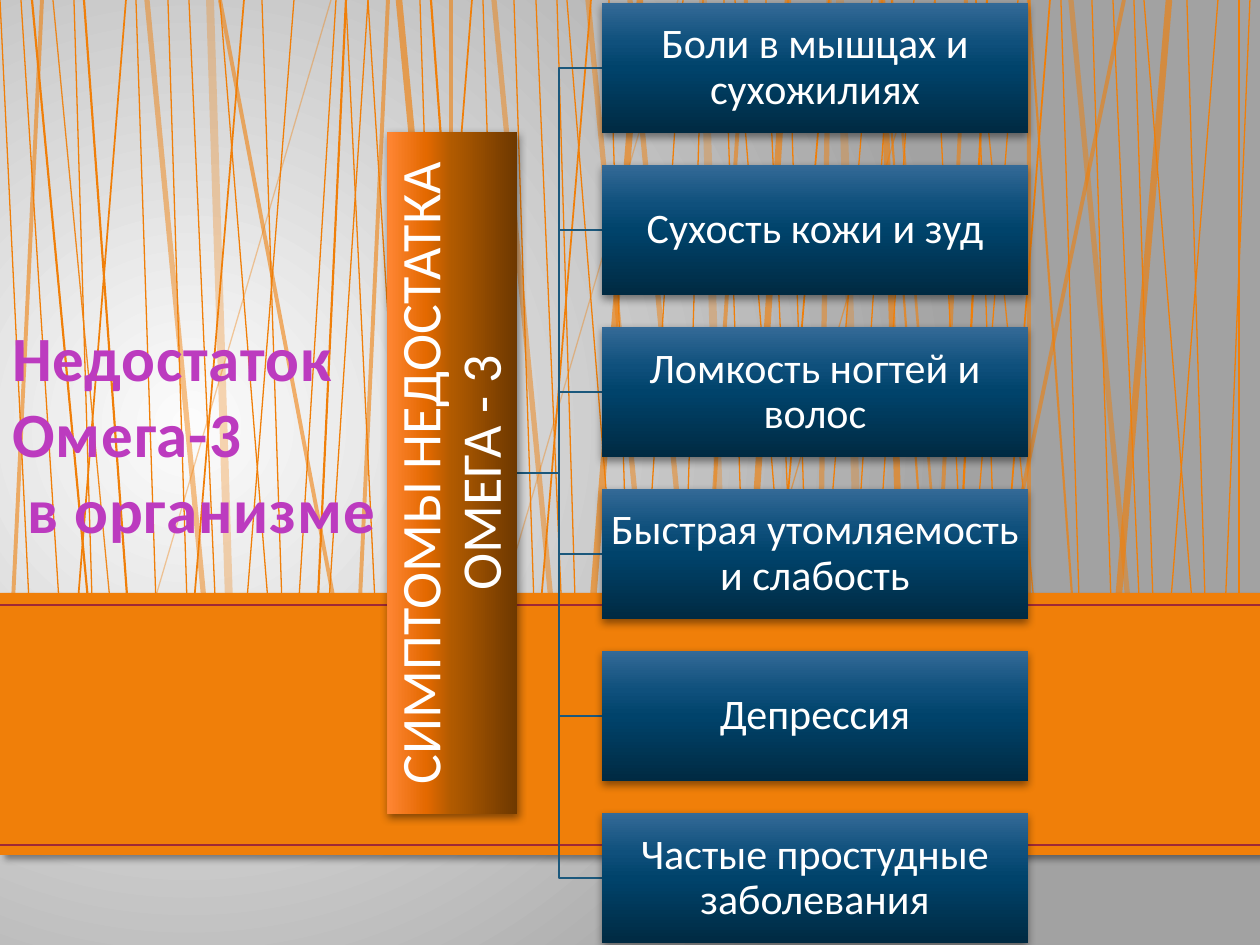
from lxml import etree
from pptx import Presentation
from pptx.dml.color import RGBColor
from pptx.enum.shapes import MSO_CONNECTOR, MSO_SHAPE
from pptx.enum.text import MSO_ANCHOR, PP_ALIGN
from pptx.oxml.ns import qn
from pptx.util import Emu, Pt

PX = 914400 // 126
W, H = 1260, 945
FONT = "Calibri"
STRAIGHT, RECT = MSO_CONNECTOR.STRAIGHT, MSO_SHAPE.RECTANGLE
MIDDLE, BOTTOM = MSO_ANCHOR.MIDDLE, MSO_ANCHOR.BOTTOM
CENTER, LEFT = PP_ALIGN.CENTER, PP_ALIGN.LEFT

COLORS = {"orange": "F07F09", "rule": "9F2936", "title": "BC3BBF",
          "branch": "1B587C", "text": "FFFFFF", "shadow": "000000"}
BACKDROP = [(0, "FCFCFC"), (100, "A2A2A2")]
BROWN = [(0, "6D3800"), (50, "B05A00"), (70, "E46900"), (100, "FF8634")]
NAVY = [(0, "002A42"), (50, "00436B"), (70, "0F507C"), (100, "346A97")]

# Shadows: opacity %, blur pt, distance pt, direction in degrees
BAND_SHADOW = (40, 4, 3, 45)
BOX_SHADOW = (43, 5, 2, 90)

TITLE = ["Недостаток ", "Омега-3", " в организме"]
ROOT = "СИМПТОМЫ НЕДОСТАТКА ОМЕГА - 3"
SYMPTOMS = [
    "Боли в мышцах и сухожилиях",
    "Сухость кожи и зуд",
    "Ломкость ногтей и волос",
    "Быстрая утомляемость и слабость",
    "Депрессия",
    "Частые простудные заболевания",
]

# Backdrop strands: (width pt, opacity %) -> (top x, bottom x)
STRANDS = {
    (0.75, 100): [
        (262, 284), (220, 273), (294, 242), (0, 32), (21, 63), (74, 94),
        (336, 295), (368, 325), (189, 218), (136, 158), (168, 189),
        (609, 630), (567, 620), (346, 378), (368, 410), (557, 577),
        (420, 441), (683, 641), (703, 683), (536, 564), (483, 504),
        (514, 536), (735, 788), (872, 819), (788, 809), (914, 872),
        (892, 850), (766, 795), (724, 746), (935, 966), (976, 998),
        (1061, 1081), (1092, 1113), (1187, 1207), (1144, 1197),
        (1218, 1166), (1134, 1155), (1250, 1223), (1113, 1142), (1018, 966)],
    (0.75, 90): [(53, 116), (976, 1040)],
    (0.75, 56): [(935, 740)],
    (0.75, 39): [(331, 136), (678, 483)],
    (1, 100): [(126, 73), (244, 189), (472, 420), (591, 536), (829, 774),
               (1050, 998)],
    (1.25, 100): [(32, 94), (84, 132), (346, 315), (431, 479), (987, 955),
                  (1239, 1239)],
    (1.25, 72): [(1029, 1077), (882, 931)],
    (1.5, 58): [(892, 945)],
    (2.25, 58): [(42, 10), (220, 346), (388, 357), (451, 451), (746, 703),
                 (966, 935), (1029, 1029), (1124, 987)],
    (3, 47): [(147, 210), (494, 557), (588, 651), (1071, 1134), (829, 819),
              (630, 693)],
    (3.75, 63): [(640, 588), (399, 462), (1169, 1113), (882, 903), (788, 746)],
    (4.5, 30): [(210, 231), (840, 861), (703, 724)],
}
STRAND_BOTTOM = 664
BAND = (0, 593, W, 262)
RULES_Y = (605, 845)
TITLE_AT = (0, 265, 402, 287)
BOX_X, BOX_TOP, BOX_W, BOX_H, PITCH = 602, 3, 426, 130, 162
ROOT_W, ROOT_RIGHT, TRUNK_X = 683, 517, 559


def px(*values):
    return [Emu(v * PX) for v in values]


def rgb(name):
    return RGBColor.from_string(COLORS[name])


def sub(parent, tag, **attrs):
    return etree.SubElement(parent, qn(tag), {k: str(v) for k, v in attrs.items()})


def set_gradient(fill, host, stops, focus=None):
    """Bottom-to-top gradient, or a circular one around the focus insets."""
    fill.gradient()
    grad = next(host.iter(qn("a:gradFill")))
    for child in list(grad):
        grad.remove(child)
    gs_list = sub(grad, "a:gsLst")
    for pos, color in stops:
        sub(sub(gs_list, "a:gs", pos=pos * 1000), "a:srgbClr", val=color)
    if focus:
        insets = {side: v * 1000 for side, v in zip("ltrb", focus)}
        sub(sub(grad, "a:path", path="circle"), "a:fillToRect", **insets)
    else:
        sub(grad, "a:lin", ang=270 * 60000, scaled=0)


def set_shadow(sp, opacity, blur, dist, angle):
    sp.shadow.inherit = False
    effects = sp._element.spPr.find(qn("a:effectLst"))
    outer = sub(effects, "a:outerShdw", blurRad=Pt(blur), dist=Pt(dist),
                dir=angle * 60000, rotWithShape=0)
    color = sub(outer, "a:srgbClr", val=COLORS["shadow"])
    sub(color, "a:alpha", val=opacity * 1000)


def add_line(s, x1, y1, x2, y2, color, width, opacity=100):
    line = s.shapes.add_connector(STRAIGHT, *px(x1, y1, x2, y2))
    line.line.color.rgb = rgb(color)
    line.line.width = Pt(width)
    sub(line._element.spPr, "a:effectLst")
    if opacity < 100:
        clr = next(line._element.spPr.iter(qn("a:srgbClr")))
        sub(clr, "a:alpha", val=opacity * 1000)


def write(tf, lines, size, color, align, anchor):
    tf.word_wrap = True
    tf.vertical_anchor = anchor
    p = tf.paragraphs[0]
    p.alignment = align
    for i, text in enumerate(lines):
        if i:
            p.add_line_break()
        r = p.add_run()
        r.text = text
        r.font.name = FONT
        r.font.size = Pt(size)
        r.font.color.rgb = rgb(color)
    return p


def add_box(s, x, y, w, h, text, size, stops):
    sp = s.shapes.add_shape(RECT, *px(x, y, w, h))
    set_gradient(sp.fill, sp._element.spPr, stops)
    sp.line.fill.background()
    set_shadow(sp, *BOX_SHADOW)
    tf = sp.text_frame
    tf.margin_left = tf.margin_right = tf.margin_top = tf.margin_bottom = Emu(2 * PX)
    write(tf, [text], size, "text", CENTER, MIDDLE).line_spacing = 0.9
    return sp


def add_backdrop(s):
    set_gradient(s.background.fill, s._element, BACKDROP, (15, 50, 85, 60))
    for (width, opacity), strands in STRANDS.items():
        for top, bottom in strands:
            add_line(s, top, 0, bottom, STRAND_BOTTOM, "orange", width, opacity)
    band = s.shapes.add_shape(RECT, *px(*BAND))
    band.fill.solid()
    band.fill.fore_color.rgb = rgb("orange")
    band.line.fill.background()
    set_shadow(band, *BAND_SHADOW)
    for y in RULES_Y:
        add_line(s, 0, y, W, y, "rule", 1.5)


def add_title(s):
    tf = s.shapes.add_textbox(*px(*TITLE_AT)).text_frame
    p = write(tf, TITLE, 36, "title", LEFT, BOTTOM)
    for r in p.runs:
        r.font.bold = True
        r.font._element.set("spc", "50")


def add_symptom_tree(s):
    tops = [BOX_TOP + i * PITCH for i in range(len(SYMPTOMS))]
    middle = (tops[0] + tops[-1] + BOX_H) // 2
    for top in reversed(tops):
        y = top + BOX_H // 2
        path = s.shapes.build_freeform(ROOT_RIGHT, middle, scale=PX)
        path.add_line_segments([(TRUNK_X, middle), (TRUNK_X, y), (BOX_X, y)], close=False)
        branch = path.convert_to_shape()
        branch.fill.background()
        branch.line.color.rgb = rgb("branch")
        branch.line.width = Pt(0.75)
        branch.shadow.inherit = False
    root_x = ROOT_RIGHT - (BOX_H + ROOT_W) // 2
    root = add_box(s, root_x, middle - BOX_H // 2, ROOT_W, BOX_H, ROOT, 32, BROWN)
    root.rotation = 270
    for top, text in zip(tops, SYMPTOMS):
        add_box(s, BOX_X, top, BOX_W, BOX_H, text, 24, NAVY)


def main():
    prs = Presentation()
    prs.slide_width, prs.slide_height = px(W, H)
    s = prs.slides.add_slide(prs.slide_layouts[6])
    add_backdrop(s)
    add_title(s)
    add_symptom_tree(s)
    prs.save("out.pptx")


if __name__ == "__main__":
    main()
